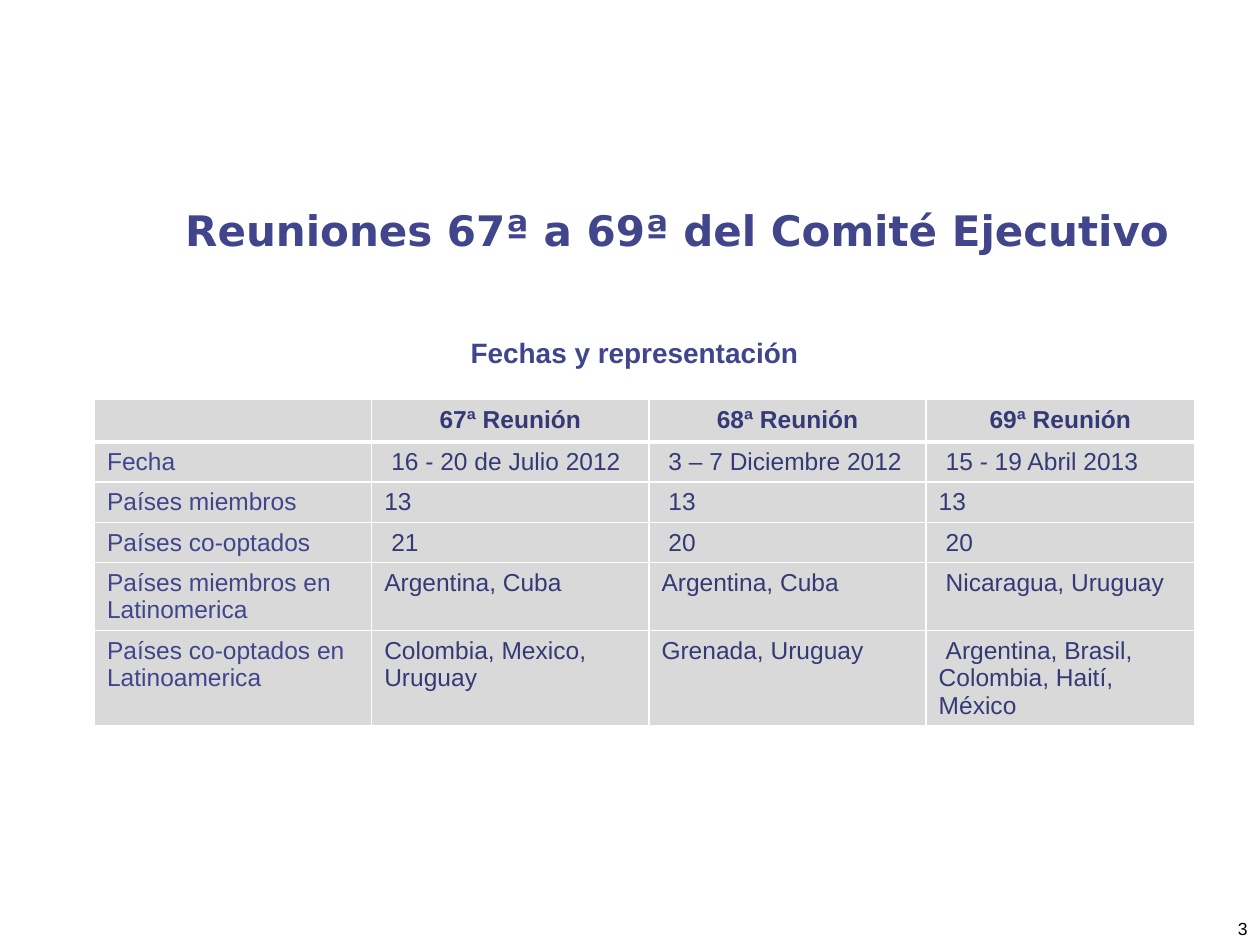
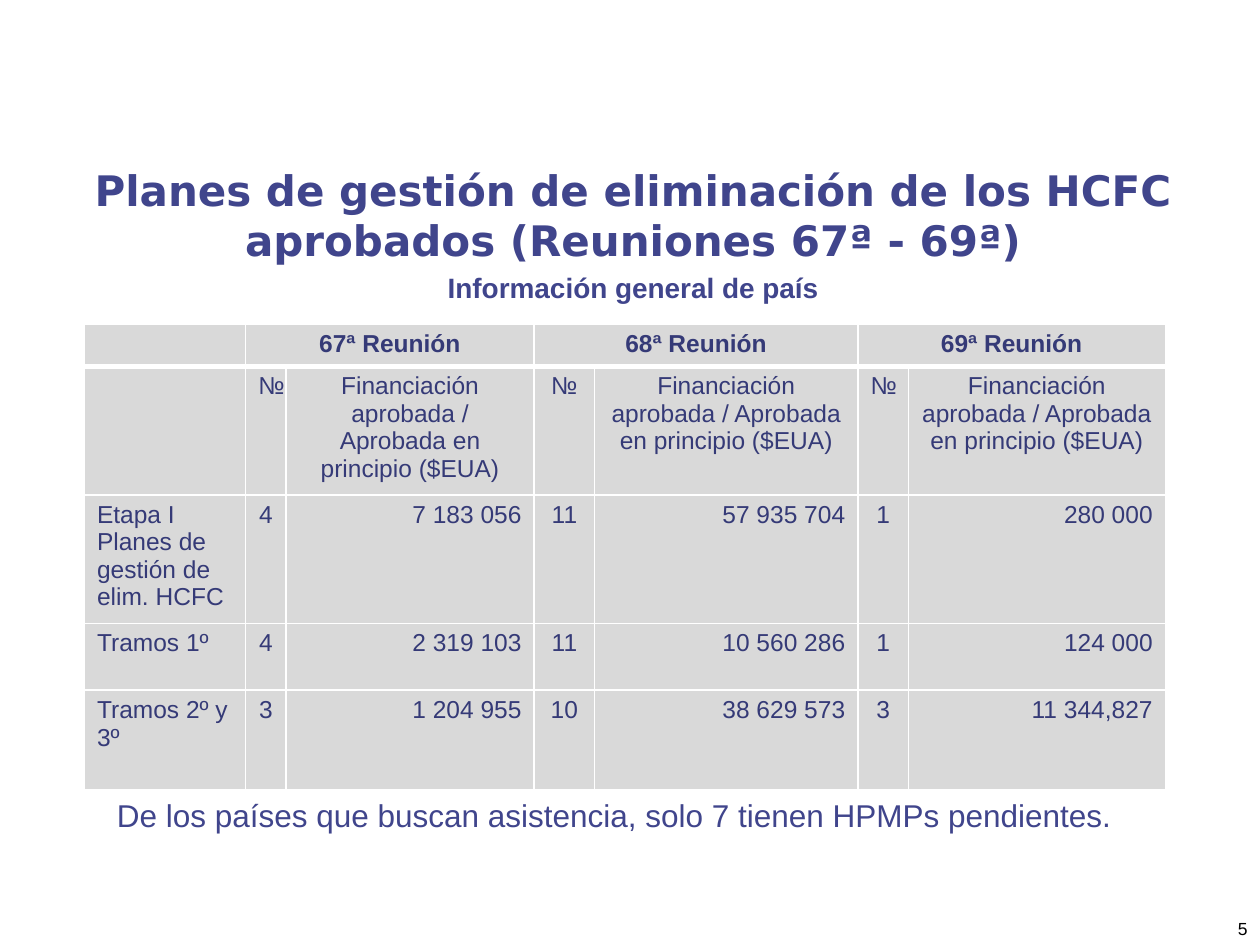
from dataclasses import dataclass

from lxml import etree
from pptx import Presentation
from pptx.dml.color import RGBColor
from pptx.enum.text import MSO_ANCHOR, MSO_AUTO_SIZE, PP_ALIGN
from pptx.oxml.ns import qn
from pptx.util import Inches, Pt

LEFT, CENTER, RIGHT = PP_ALIGN.LEFT, PP_ALIGN.CENTER, PP_ALIGN.RIGHT
TOP, MIDDLE, BOTTOM = MSO_ANCHOR.TOP, MSO_ANCHOR.MIDDLE, MSO_ANCHOR.BOTTOM
FIXED_SIZE = MSO_AUTO_SIZE.NONE

INDIGO = RGBColor(0x40, 0x45, 0x8C)
DARK_INDIGO = RGBColor(0x35, 0x3A, 0x77)
LIGHT_GREY = RGBColor(0xD9, 0xD9, 0xD9)
WHITE = RGBColor(0xFF, 0xFF, 0xFF)
BLACK = RGBColor(0, 0, 0)

SLIDE_WIDTH, SLIDE_HEIGHT = Inches(10), Inches(7.5)
COLUMN = SLIDE_WIDTH // 100
ROW = SLIDE_HEIGHT // 75
TITLE_ONLY = 5
THIN, THICK = Pt(1), Pt(3)
FIRST_LINE_INDENT = Pt(4)


@dataclass(frozen=True)
class Frame:
    """A place on the slide, in grid columns and rows."""
    left: float
    top: float
    width: float
    height: float

    def lengths(self) -> tuple[int, int, int, int]:
        return (round(self.left * COLUMN), round(self.top * ROW),
                round(self.width * COLUMN), round(self.height * ROW))


@dataclass(frozen=True)
class TextStyle:
    size: int
    color: RGBColor
    bold: bool = False
    font: str = "Arial"
    align: PP_ALIGN = LEFT
    anchor: MSO_ANCHOR = TOP


@dataclass(frozen=True)
class Grid:
    left: float
    top: float
    widths: tuple[float, ...]
    heights: tuple[float, ...]
    texts: tuple[tuple[str, ...], ...]
    aligns: tuple[PP_ALIGN, ...]
    label_color: RGBColor = DARK_INDIGO
    header_rows: int = 1
    header_span: int = 1
    indented: frozenset[tuple[int, int]] = frozenset()


@dataclass(frozen=True)
class Page:
    number: str
    title: str
    title_frame: Frame
    subtitle: str
    subtitle_frame: Frame
    grid: Grid
    note: str = ""


TITLE = TextStyle(24, INDIGO, True, "DejaVu Sans", CENTER, MIDDLE)
SUBTITLE = TextStyle(16, INDIGO, True, align=CENTER)
NOTE = TextStyle(18, INDIGO)
PAGE_NUMBER = TextStyle(10, BLACK, align=RIGHT, anchor=BOTTOM)
NUMBER_FRAME = Frame(91.7, 70, 8.3, 5)
NOTE_FRAME = Frame(8.3, 62.7, 86.6, 7.1)
FUNDING = "Financiación aprobada / Aprobada en principio ($EUA)"

PAGES = (
    Page(
        "3", "Reuniones 67ª a 69ª del Comité Ejecutivo",
        Frame(7.5, 13.1, 92.5, 10.2),
        "Fechas y representación", Frame(4.3, 26.1, 92.1, 3.5),
        Grid(
            7.5, 31.7, (22, 22, 22, 21.3), (3.1, 3.2, 3.2, 3.2, 5.4, 7.5),
            (
                ("", "67ª Reunión", "68ª Reunión", "69ª Reunión"),
                ("Fecha", "16 - 20 de Julio 2012", "3 – 7 Diciembre 2012",
                 "15 - 19 Abril 2013"),
                ("Países miembros", "13", "13", "13"),
                ("Países co-optados", "21", "20", "20"),
                ("Países miembros en Latinomerica", "Argentina, Cuba",
                 "Argentina, Cuba", "Nicaragua, Uruguay"),
                ("Países co-optados en Latinoamerica",
                 "Colombia, Mexico, Uruguay", "Grenada, Uruguay",
                 "Argentina, Brasil, Colombia, Haití, México"),
            ),
            (LEFT,) * 4, label_color=INDIGO,
            indented=frozenset({(1, 1), (1, 2), (1, 3), (2, 2), (3, 1),
                                (3, 2), (3, 3), (4, 3), (5, 3)}),
        ),
    ),
    Page(
        "5",
        "Planes de gestión de eliminación de los HCFC aprobados "
        "(Reuniones 67ª - 69ª)",
        Frame(2.8, 13.1, 94.9, 7.9),
        "Información general de país", Frame(4.2, 21, 92.1, 3.9),
        Grid(
            6.7, 25.7, (12.8, 3.2, 19.7, 4.8, 20.9, 4, 20.4),
            (3.3, 10.2, 10.2, 5.3, 7.9),
            (
                ("", "67ª Reunión", "", "68ª Reunión", "", "69ª Reunión", ""),
                ("",) + ("№", FUNDING) * 3,
                ("Etapa I Planes de gestión de elim. HCFC", "4", "7 183 056",
                 "11", "57 935 704", "1", "280 000"),
                ("Tramos 1º", "4", "2 319 103", "11", "10 560 286",
                 "1", "124 000"),
                ("Tramos 2º y 3º", "3", "1 204 955", "10", "38 629 573",
                 "3", "11 344,827"),
            ),
            (LEFT,) + (CENTER, RIGHT) * 3, header_rows=2, header_span=2,
        ),
        "De los países que buscan asistencia, solo 7 tienen HPMPs pendientes.",
    ),
)


def write(text_frame, text: str, style: TextStyle) -> None:
    text_frame.text = text
    paragraph = text_frame.paragraphs[0]
    paragraph.alignment = style.align
    for run in paragraph.runs:
        run.font.name = style.font
        run.font.size = Pt(style.size)
        run.font.bold = style.bold
        run.font.color.rgb = style.color


def fill_box(box, text: str, style: TextStyle) -> None:
    text_frame = box.text_frame
    text_frame.word_wrap = True
    text_frame.auto_size = FIXED_SIZE
    text_frame.vertical_anchor = style.anchor
    write(text_frame, text, style)


def add_text(slide, frame: Frame, text: str, style: TextStyle) -> None:
    fill_box(slide.shapes.add_textbox(*frame.lengths()), text, style)


def set_borders(cell, top: int, bottom: int) -> None:
    properties = cell._tc.get_or_add_tcPr()
    sides = (("a:lnL", THIN), ("a:lnR", THIN), ("a:lnT", top), ("a:lnB", bottom))
    for position, (tag, width) in enumerate(sides):
        line = etree.Element(qn(tag), w=str(int(width)))
        fill = etree.SubElement(line, qn("a:solidFill"))
        etree.SubElement(fill, qn("a:srgbClr"), val=str(WHITE))
        properties.insert(position, line)


def fill_cell(cell, grid: Grid, row: int, column: int) -> None:
    style = TextStyle(
        14, DARK_INDIGO if column else grid.label_color, bold=row == 0,
        align=CENTER if row < grid.header_rows else grid.aligns[column])
    text = grid.texts[row][column]
    write(cell.text_frame, text, style)
    paragraph = cell.text_frame.paragraphs[0]._p
    if not text:
        paragraph.get_or_add_endParaRPr().set("sz", str(style.size * 100))
    if (row, column) in grid.indented:
        paragraph.get_or_add_pPr().set("indent", str(int(FIRST_LINE_INDENT)))
    cell.fill.solid()
    cell.fill.fore_color.rgb = LIGHT_GREY
    set_borders(cell, THICK if row == 1 else THIN, THICK if row == 0 else THIN)


def add_grid(slide, grid: Grid) -> None:
    frame = Frame(grid.left, grid.top, sum(grid.widths), sum(grid.heights))
    table = slide.shapes.add_table(
        len(grid.heights), len(grid.widths), *frame.lengths()).table
    for column, width in zip(table.columns, grid.widths):
        column.width = round(width * COLUMN)
    for row, height in zip(table.rows, grid.heights):
        row.height = round(height * ROW)
    for row in range(len(grid.heights)):
        for column in range(len(grid.widths)):
            fill_cell(table.cell(row, column), grid, row, column)
    if grid.header_span > 1:
        for first in range(1, len(grid.widths), grid.header_span):
            last = first + grid.header_span - 1
            table.cell(0, first).merge(table.cell(0, last))


def add_page(deck, page: Page) -> None:
    slide = deck.slides.add_slide(deck.slide_layouts[TITLE_ONLY])
    title = slide.shapes.title
    title.left, title.top, title.width, title.height = page.title_frame.lengths()
    fill_box(title, page.title, TITLE)
    add_grid(slide, page.grid)
    add_text(slide, NUMBER_FRAME, page.number, PAGE_NUMBER)
    add_text(slide, page.subtitle_frame, page.subtitle, SUBTITLE)
    if page.note:
        add_text(slide, NOTE_FRAME, page.note, NOTE)


def main() -> None:
    deck = Presentation()
    deck.slide_width, deck.slide_height = SLIDE_WIDTH, SLIDE_HEIGHT
    for page in PAGES:
        add_page(deck, page)
    deck.save("out.pptx")


if __name__ == "__main__":
    main()
